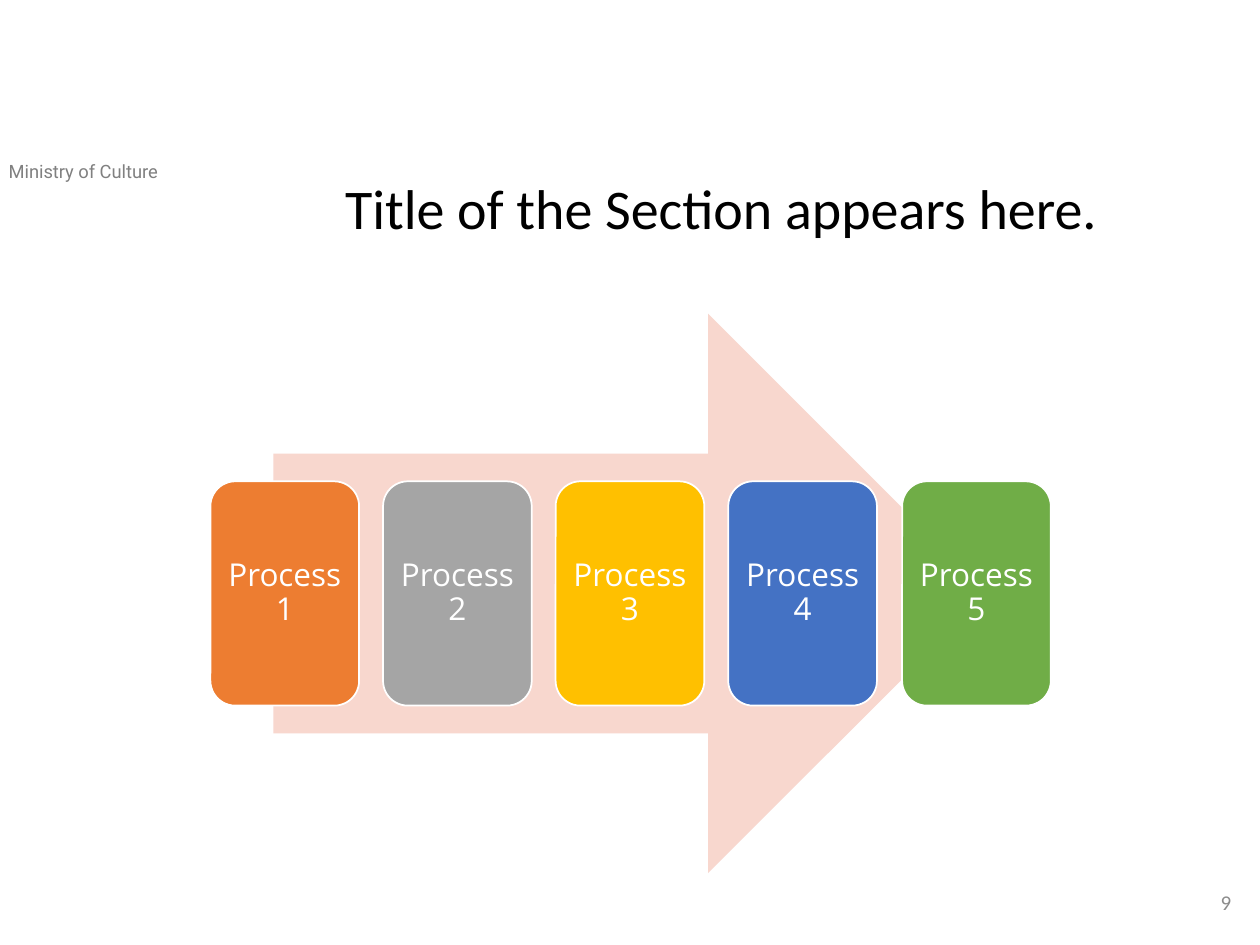
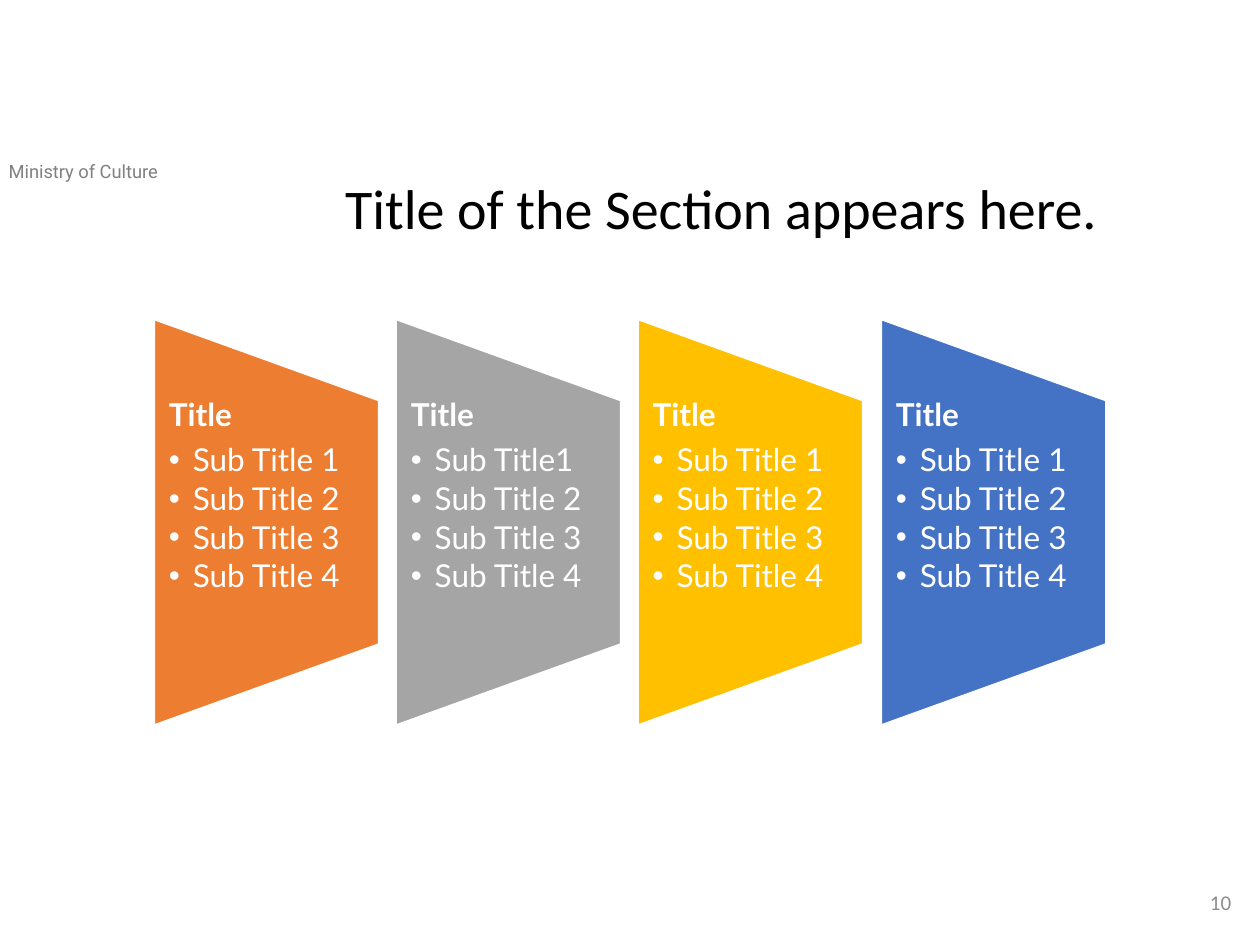
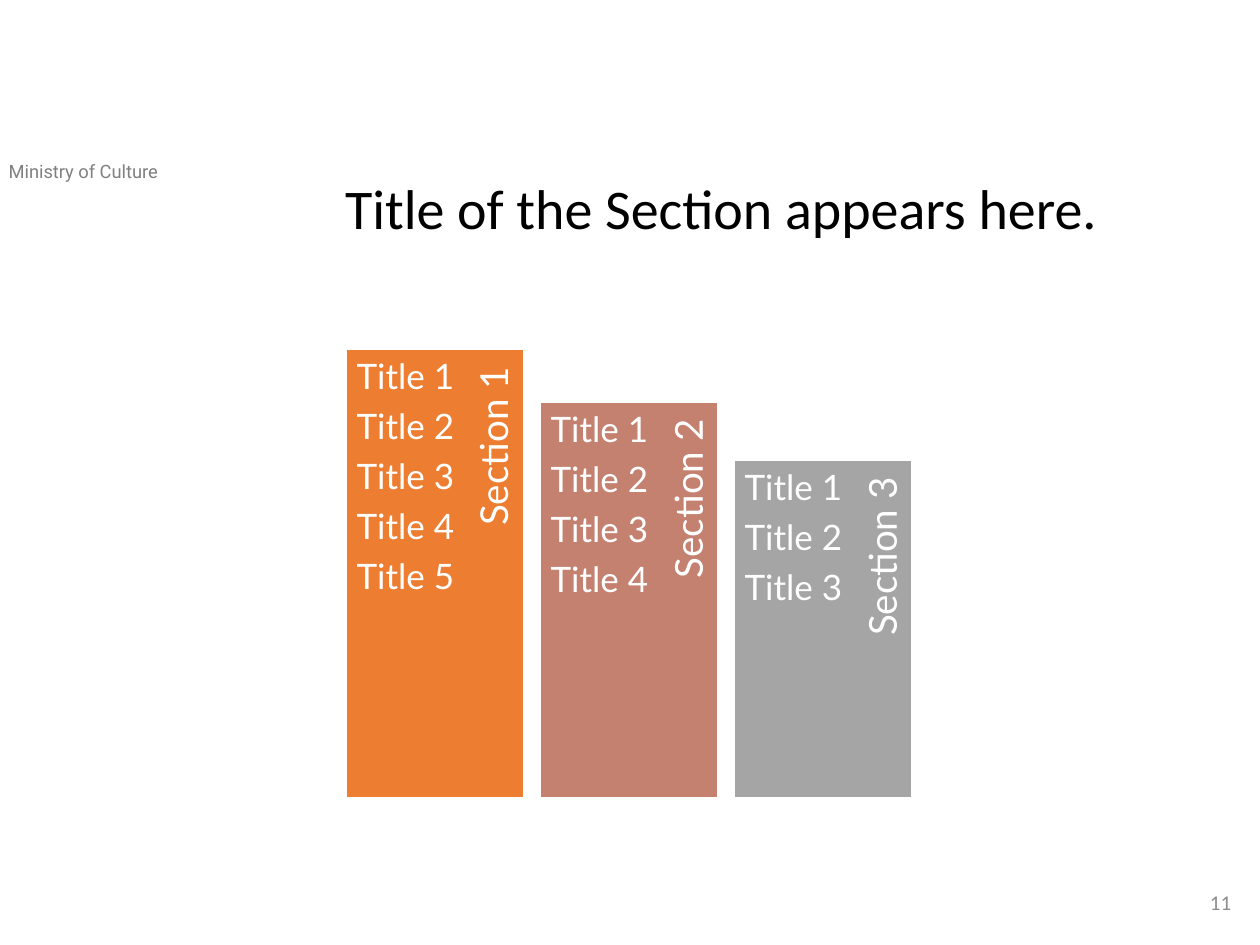
from lxml.etree import SubElement as Sub
from pptx import Presentation
from pptx.dml.color import RGBColor as RGB
from pptx.enum.shapes import MSO_SHAPE as Kind
from pptx.enum.text import MSO_ANCHOR as Anchor, MSO_AUTO_SIZE as Auto, PP_ALIGN as Align
from pptx.oxml.ns import qn
from pptx.util import Pt

PX = 9144
HUES = {
    "white": "FFFFFF", "black": "000000", "owner": "808080", "page": "8C8C8C",
    "arrow": "F8D7CE", "orange": "ED7D31", "gray": "A5A5A5", "gold": "FFC000",
    "blue": "4472C4", "green": "70AD47", "rose": "C48170",
}


class Deck:
    """Holds the shared style and the current slide."""

    def __init__(self):
        self.prs = Presentation()
        self.prs.slide_width, self.prs.slide_height = 1000 * PX, 750 * PX
        self.slide = None

    def hue(self, name):
        return RGB.from_string(HUES[name])

    def page(self, num):
        self.slide = self.prs.slides.add_slide(self.prs.slide_layouts[6])
        owner = self.text((-3, 122, 218, 28), ["Ministry of Culture"], "Roboto", 10.5, "owner")
        owner.text_frame.auto_size = Auto.SHAPE_TO_FIT_TEXT
        self.text((762, 696, 225, 40), [str(num)], "Calibri", 12, "page",
                  align=Align.RIGHT, anchor=Anchor.MIDDLE)
        self.text((264, 139, 662, 79), ["Title of the Section appears here."],
                  "Calibri", 32, "black", line=0.9)

    def shape(self, kind, box, fill, edge=0, turn=0):
        item = self.slide.shapes.add_shape(kind, *(n * PX for n in box))
        item.shadow.inherit = False
        item.rotation = turn
        item.fill.solid()
        item.fill.fore_color.rgb = self.hue(fill)
        if edge:
            item.line.color.rgb = self.hue("white")
            item.line.width = Pt(edge)
        else:
            item.line.fill.background()
        return item

    def text(self, box, lines, font, size, color="white", turn=0, **style):
        item = self.slide.shapes.add_textbox(*(n * PX for n in box))
        item.rotation = turn
        self.label(item, lines, font, size, color, **style)
        return item

    def label(self, item, lines, font, size, color="white", align=Align.LEFT,
              anchor=Anchor.TOP, pad=(10, 5, 10, 5), line=None, after=0):
        frame = item.text_frame
        frame.text = "\n".join(lines)
        frame.word_wrap = True
        frame.vertical_anchor = anchor
        (frame.margin_left, frame.margin_top,
         frame.margin_right, frame.margin_bottom) = (n * PX for n in pad)
        for par in frame.paragraphs:
            par.alignment = align
            par.line_spacing = line
            par.space_after = Pt(after)
            for run in par.runs:
                run.font.name, run.font.size = font, Pt(size)
                run.font.color.rgb = self.hue(color)

    def bullet(self, par, after):
        par.space_after = Pt(after)
        props = par._p.get_or_add_pPr()
        props.set("marL", str(19 * PX))
        props.set("indent", str(-19 * PX))
        Sub(props, qn("a:buFont"), typeface="Arial")
        Sub(props, qn("a:buChar"), char="•")

    def card(self, left, name, fill):
        item = self.shape(Kind.ROUNDED_RECTANGLE, (left, 382, 118, 178), fill, 1)
        self.label(item, [name], "Open Sans", 18, align=Align.CENTER,
                   anchor=Anchor.MIDDLE, pad=(7, 7, 7, 7), line=0.9, after=6.3)

    def panel(self, left, subs, fill):
        self.shape(Kind.FLOWCHART_MANUAL_OPERATION, (left - 72, 325, 323, 179), fill, 1.5, 270)
        item = self.text((left, 317, 179, 194), ["Title"] + subs, "Lato", 18,
                         pad=(12, 0, 12, 0), line=0.9, after=6.3)
        head, *rest = item.text_frame.paragraphs
        head.runs[0].font.bold = True
        for par in rest:
            self.bullet(par, 2.7)

    def column(self, left, top, name, count, fill):
        high = 633 - top
        size = round(high * 0.9)
        self.shape(Kind.RECTANGLE, (left, top, 141, high), fill, 1)
        self.text((left + 120 - size // 2, top + size // 2 - 18, size, 37), [name],
                  "Lato", 22, turn=270, align=Align.RIGHT, anchor=Anchor.MIDDLE,
                  pad=(9, 0, 14, 3), line=0.9, after=7.7)
        self.text((left, top, 100, high), [f"Title {n + 1}" for n in range(count)],
                  "Lato", 20, pad=(8, 8, 8, 8), line=0.9, after=7)


def main():
    deck = Deck()

    deck.page(9)
    deck.shape(Kind.RIGHT_ARROW, (217, 249, 567, 444), "arrow")
    for i, fill in enumerate(["orange", "gray", "gold", "blue", "green"]):
        deck.card(167 + 549 * i // 4, f"Process {i + 1}", fill)

    deck.page(10)
    for i, fill in enumerate(["orange", "gray", "gold", "blue"]):
        first = "Sub Title1" if fill == "gray" else "Sub Title 1"
        subs = [first] + [f"Sub Title {n}" for n in (2, 3, 4)]
        deck.panel(122 + 577 * i // 3, subs, fill)

    deck.page(11)
    for i, (top, fill) in enumerate([(277, "orange"), (319, "rose"), (365, "gray")]):
        deck.column(275 + 154 * i, top, f"Section {i + 1}", 5 - i, fill)

    deck.prs.save("out.pptx")


if __name__ == "__main__":
    main()
